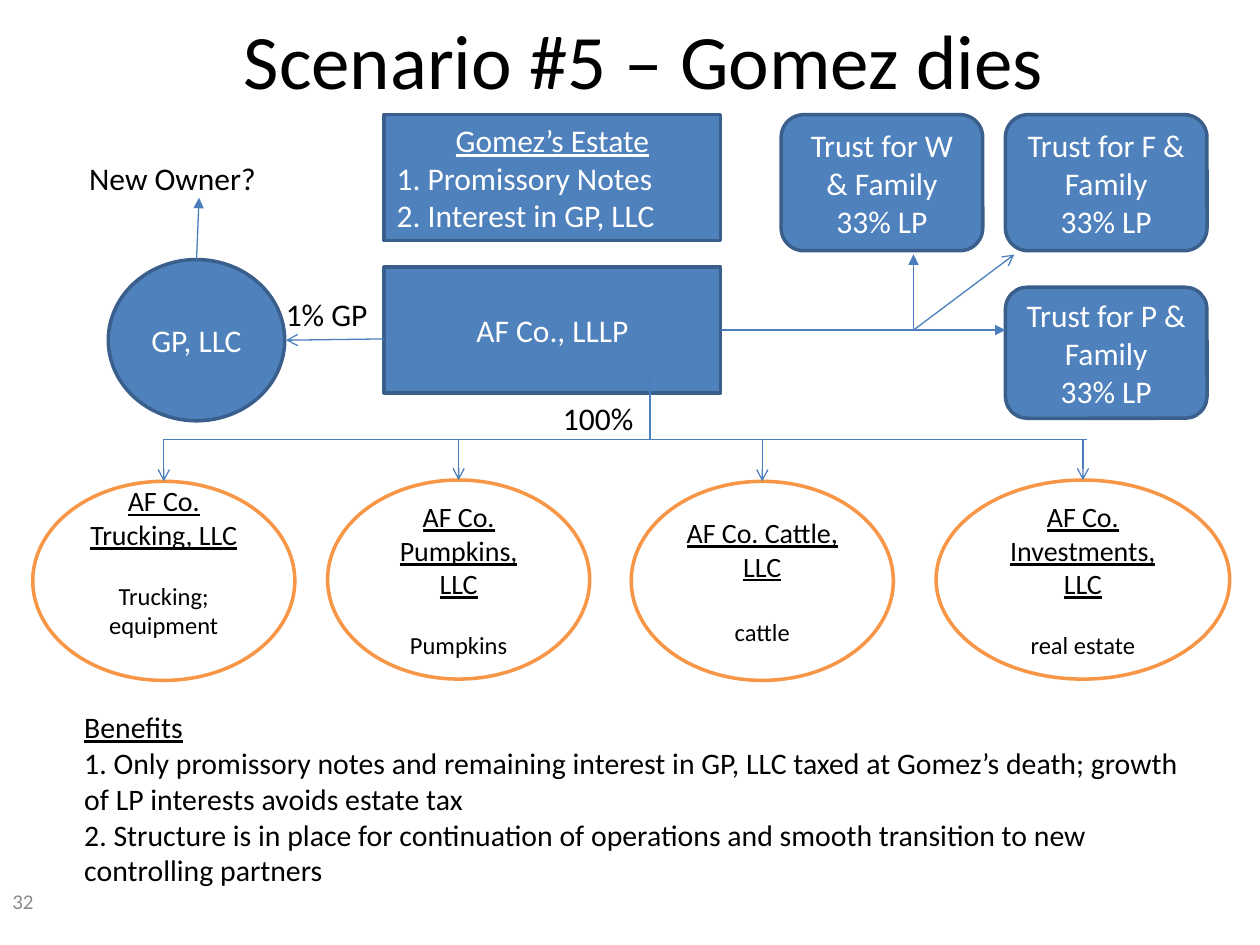
from pptx import Presentation
from pptx import util as u
from pptx.dml.color import RGBColor
from pptx.enum import shapes, text
from pptx.oxml.ns import qn
from lxml import etree

COLORS = {
    "blue": "4F81BD", "blue_edge": "3A5F8C", "connector": "4B7EBC",
    "orange": "F79646", "white": "FFFFFF", "black": "000000", "gray": "8C8C8C",
}
SHAPE = shapes.MSO_SHAPE
LEFT, CENTER = text.PP_ALIGN.LEFT, text.PP_ALIGN.CENTER


def color(name):
    return RGBColor.from_string(COLORS[name])


def write(paragraph, words, size=18, ink="black", align=LEFT, underline=False, before=0):
    paragraph.alignment = align
    paragraph.space_before = u.Pt(before)
    run = paragraph.add_run()
    run.text = words
    font = run.font
    font.name, font.size, font.underline = "Calibri", u.Pt(size), underline
    font.color.rgb = color(ink)


def write_lines(frame, lines, **common):
    """Write (words, own format) pairs, one paragraph each."""
    for i, (words, own) in enumerate(lines):
        paragraph = frame.add_paragraph() if i else frame.paragraphs[0]
        write(paragraph, words, **{**common, **own})


def add_label(slide, box, *lines, anchor=text.MSO_ANCHOR.TOP, **common):
    label = slide.shapes.add_textbox(*map(u.Inches, box))
    label.text_frame.word_wrap = True
    label.text_frame.vertical_anchor = anchor
    write_lines(label.text_frame, lines, **common)


def add_node(slide, kind, box, *lines, fill="blue", edge="blue_edge", ink="white"):
    node = slide.shapes.add_shape(kind, *map(u.Inches, box))
    node.shadow.inherit = False
    node.fill.solid()
    node.fill.fore_color.rgb = color(fill)
    node.line.color.rgb = color(edge)
    node.line.width = u.Pt(2)
    node.text_frame.word_wrap = True
    node.text_frame.vertical_anchor = text.MSO_ANCHOR.MIDDLE
    write_lines(node.text_frame, lines, ink=ink, align=CENTER)
    return node


def add_line(slide, start, end, head=None):
    line = slide.shapes.add_connector(
        shapes.MSO_CONNECTOR.STRAIGHT, *map(u.Inches, (*start, *end)))
    line.line.color.rgb = color("connector")
    line.line.width = u.Pt(0.75)
    if head:
        etree.SubElement(line.line._get_or_add_ln(), qn("a:tailEnd"), type=head)
    etree.SubElement(line._element.spPr, qn("a:effectLst"))
    return line


def add_title(slide, words):
    title = slide.shapes.title
    title.left, title.top, title.width, title.height = map(u.Inches, (0.61, 0.03, 9, 0.88))
    title.text_frame.vertical_anchor = text.MSO_ANCHOR.MIDDLE
    write(title.text_frame.paragraphs[0], words, size=44, align=CENTER)


def add_partnership(slide):
    partnership = add_node(slide, SHAPE.RECTANGLE, (3.05, 2.12, 2.67, 1), ("AF Co., LLLP", {}))
    add_node(slide, SHAPE.RECTANGLE, (3.05, 0.91, 2.67, 1),
             ("Gomez’s Estate", {"underline": True}),
             ("1. Promissory Notes", {"align": LEFT}),
             ("2. Interest in GP, LLC", {"align": LEFT}))
    return partnership


def add_general_partner(slide):
    partner = add_node(slide, SHAPE.OVAL, (0.86, 2.06, 1.4, 1.28), ("GP, LLC", {}))
    add_line(slide, (3.05, 2.69), (2.27, 2.7), "arrow")
    add_label(slide, (2.17, 2.29, 1, 0.4), ("1% GP", {}))
    add_line(slide, (1.56, 2.06), (1.58, 1.57), "triangle").begin_connect(partner, 0)
    add_label(slide, (0.61, 1.21, 1.54, 0.4), ("New Owner?", {}))


def add_trusts(slide, partnership):
    trusts = [("W", 6.2, 0.91, 1.08), ("F", 7.98, 0.91, 1.08), ("P", 7.98, 2.28, 1.04)]
    for initial, left, top, height in trusts:
        add_node(slide, SHAPE.ROUNDED_RECTANGLE, (left, top, 1.6, height),
                 (f"Trust for {initial} & Family", {}), ("33% LP", {}))
    fork = (7.25, 2.62)
    add_line(slide, fork, (5.72, 2.62)).end_connect(partnership, 3)
    for end, head in [((8.05, 2.02), "arrow"), ((7.25, 2.02), "triangle"),
                      ((7.98, 2.62), "triangle")]:
        add_line(slide, fork, end, head)


def add_subsidiaries(slide):
    bus_y = 3.49
    add_line(slide, (5.16, 2.96), (5.16, bus_y))
    add_line(slide, (1.29, bus_y), (8.63, bus_y))
    add_label(slide, (4.37, 3.12, 0.96, 0.4), ("100%", {}))
    subsidiaries = [
        ("Trucking", "Trucking; equipment", 0.26, 3.82, 2.08, 17),
        ("Pumpkins", "Pumpkins", 2.6, 3.81, 2.08, 17),
        ("Cattle", "cattle", 5.01, 3.82, 2.08, 19.5),
        ("Investments", "real estate", 7.43, 3.81, 2.33, 17),
    ]
    for name, assets, left, top, width, gap in subsidiaries:
        company = add_node(slide, SHAPE.OVAL, (left, top, width, 1.58),
                           (f"AF Co. {name}, LLC", {"size": 16, "underline": True}),
                           (assets, {"size": 14, "before": gap}),
                           fill="white", edge="orange", ink="black")
        if name == "Trucking":  # its text sits higher than in the others
            company.text_frame.margin_bottom = u.Inches(0.35)
        middle = left + width / 2
        add_line(slide, (middle, bus_y), (middle, top), "arrow").end_connect(company, 0)


def add_benefits(slide):
    add_label(slide, (0.57, 5.58, 8.89, 1.53),
              ("Benefits", {"underline": True}),
              ("1. Only promissory notes and remaining interest in GP, LLC taxed at "
               "Gomez’s death; growth of LP interests avoids estate tax", {}),
              ("2. Structure is in place for continuation of operations and smooth "
               "transition to new controlling partners", {}),
              size=17)


def main():
    deck = Presentation()
    deck.slide_width, deck.slide_height = u.Inches(10), u.Inches(7.5)
    slide = deck.slides.add_slide(deck.slide_layouts[5])
    add_title(slide, "Scenario #5 – Gomez dies")
    partnership = add_partnership(slide)
    add_general_partner(slide)
    add_trusts(slide, partnership)
    add_subsidiaries(slide)
    add_benefits(slide)
    add_label(slide, (0, 6.95, 2.33, 0.4), ("32", {}), size=12, ink="gray",
              anchor=text.MSO_ANCHOR.MIDDLE)
    deck.save("out.pptx")


if __name__ == "__main__":
    main()
